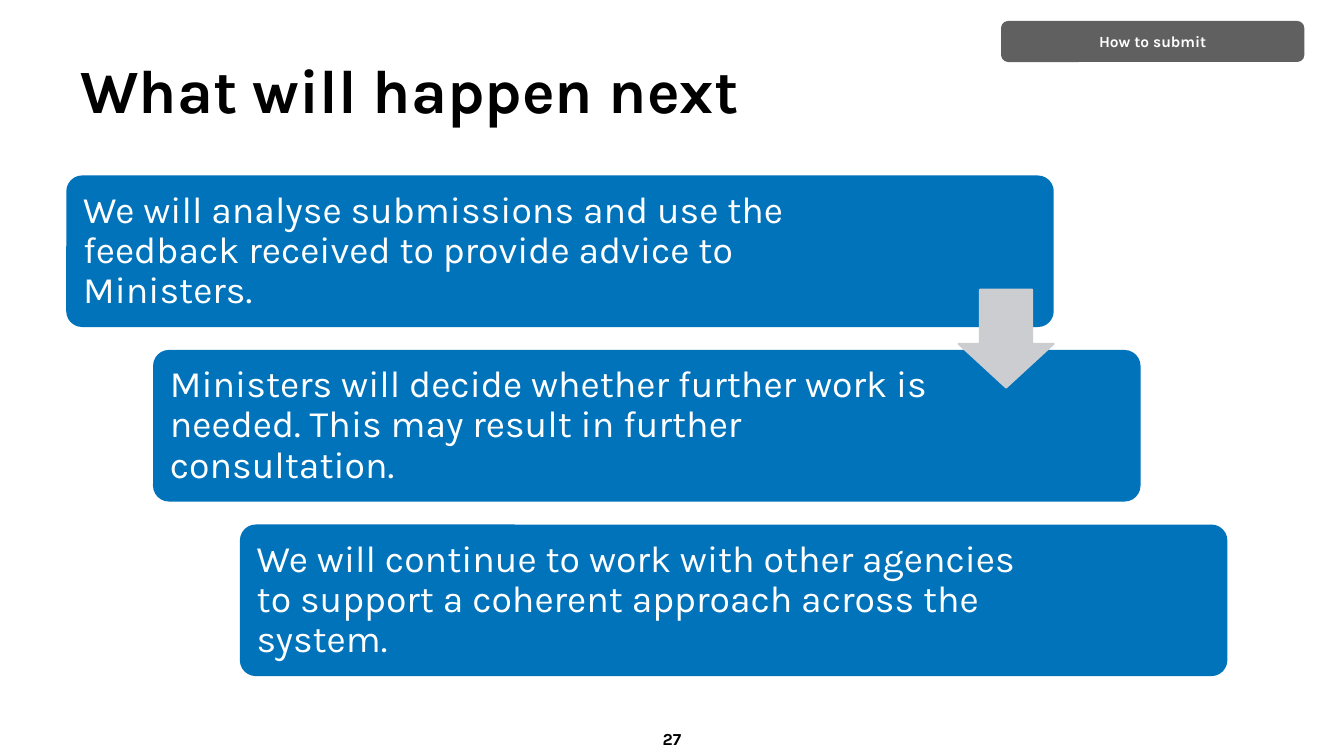
from pptx import Presentation
from pptx.dml.color import RGBColor
from pptx.enum.shapes import MSO_SHAPE
from pptx.enum.text import MSO_ANCHOR, PP_ALIGN
from pptx.util import Pt

BLACK = RGBColor(0x00, 0x00, 0x00)
WHITE = RGBColor(0xFF, 0xFF, 0xFF)
BLUE = RGBColor(0x00, 0x73, 0xBB)
DARK_GREY = RGBColor(0x60, 0x60, 0x60)
LIGHT_GREY = RGBColor(0xCC, 0xCD, 0xD0)
FONT = "Karla"

# Each step: wording and right inset in points
STEPS = [
    ("We will analyse submissions and use the feedback received "
     "to provide advice to Ministers.", 87.6),
    ("Ministers will decide whether further work is needed. "
     "This may result in further consultation.", 106.2),
    ("We will continue to work with other agencies to support "
     "a coherent approach across the system.", 106.2),
]


def write(shape, text, size, color, bold=False, align=PP_ALIGN.LEFT,
          line_spacing=1.0, insets=(7.2, 3.6, 7.2, 3.6)):
    """Fill a shape with one paragraph; insets run left, top, right, bottom."""
    frame = shape.text_frame
    frame.word_wrap = True
    frame.vertical_anchor = MSO_ANCHOR.MIDDLE
    frame.margin_left, frame.margin_top, frame.margin_right, frame.margin_bottom = map(Pt, insets)
    para = frame.paragraphs[0]
    para.alignment = align
    para.line_spacing = line_spacing
    span = para.add_run()
    span.text = text
    span.font.name = FONT
    span.font.size = Pt(size)
    span.font.bold = bold
    span.font.color.rgb = color


def add_text(page, left, top, width, height, text, size, **style):
    box = page.shapes.add_textbox(Pt(left), Pt(top), Pt(width), Pt(height))
    write(box, text, size, BLACK, bold=True, **style)


def add_solid(page, preset, left, top, width, height, color, line_width=1):
    """Add a preset shape whose outline matches its fill."""
    shape = page.shapes.add_shape(preset, Pt(left), Pt(top), Pt(width), Pt(height))
    shape.shadow.inherit = False
    shape.fill.solid()
    shape.fill.fore_color.rgb = color
    shape.line.color.rgb = color
    shape.line.width = Pt(line_width)
    return shape


def add_section_tag(page, left, top, width, height):
    tag = add_solid(page, MSO_SHAPE.ROUNDED_RECTANGLE, left, top, width, height, DARK_GREY, 0.5)
    write(tag, "How to submit", 8.3, WHITE, bold=True, align=PP_ALIGN.CENTER,
          insets=(2.9, 0.7, 2.9, 0.7))


def add_down_arrow(page, left, top, width, height):
    arrow = add_solid(page, MSO_SHAPE.DOWN_ARROW, left, top, width, height, LIGHT_GREY)
    arrow.adjustments[0] = 0.55
    arrow.adjustments[1] = 0.46


def add_staircase(page, left, top, width, height):
    """Place the steps from the top left to the bottom right of the region."""
    step_width, step_height = 528, 80.2
    shift = (width - step_width) / (len(STEPS) - 1)
    drop = (height - step_height) / (len(STEPS) - 1)
    for index, (text, right_inset) in enumerate(STEPS):
        step = add_solid(page, MSO_SHAPE.ROUNDED_RECTANGLE, left + index * shift,
                         top + index * drop, step_width, step_height, BLUE)
        step.adjustments[0] = 0.1
        write(step, text, 20, WHITE, line_spacing=0.9,
              insets=(6.2, 6.2, right_inset, 6.2))
    arrow_width, arrow_height = 51, 52.5
    add_down_arrow(page, left + step_width - arrow_width + 0.5, top + 60.7,
                   arrow_width, arrow_height)


def main():
    deck = Presentation()
    deck.slide_width, deck.slide_height = Pt(720), Pt(405)
    page = deck.slides.add_slide(deck.slide_layouts[6])
    add_text(page, 36, 16.5, 648, 67.5, "What will happen next", 33, line_spacing=0.9)
    add_staircase(page, 36, 94.5, 621, 267.2)
    add_text(page, 49.5, 385, 621, 21.6, "27", 9, align=PP_ALIGN.CENTER)
    add_section_tag(page, 536.5, 11.5, 162, 21.5)
    deck.save("out.pptx")


if __name__ == "__main__":
    main()
